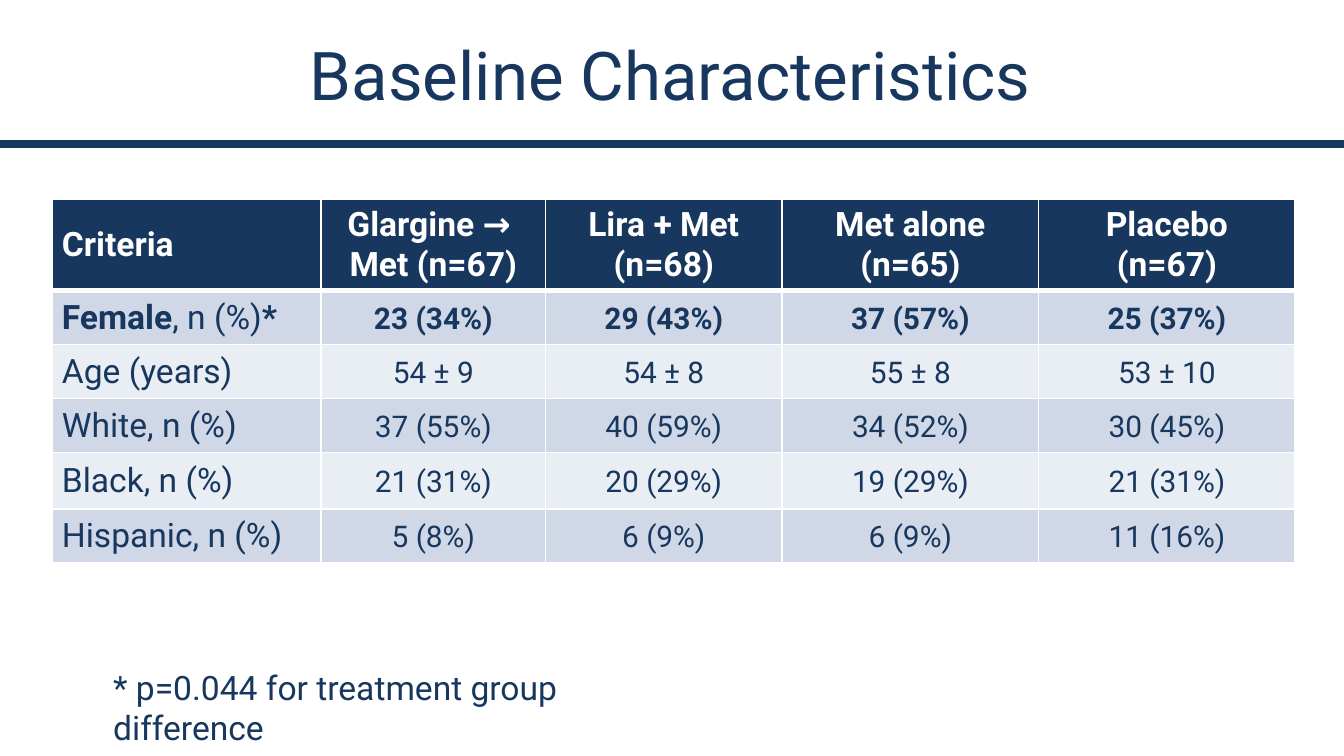
from dataclasses import dataclass

from lxml.etree import SubElement
from pptx import Presentation
from pptx.dml.color import RGBColor
from pptx.enum.shapes import MSO_CONNECTOR
from pptx.enum.text import MSO_ANCHOR, PP_ALIGN
from pptx.oxml.ns import qn
from pptx.slide import Slide
from pptx.table import _Cell
from pptx.text.text import TextFrame, _Paragraph
from pptx.util import Cm, Pt

FONT = "Roboto"
NAVY = RGBColor(0x17, 0x37, 0x5E)
WHITE = RGBColor(0xFF, 0xFF, 0xFF)
BAND_DARK = RGBColor(0xD0, 0xD8, 0xE8)
BAND_LIGHT = RGBColor(0xE9, 0xED, 0xF4)
COLUMN_WIDTHS = (5.08, 4.24, 4.47, 4.85, 4.85)
HEADER_HEIGHT = 1.7


@dataclass(frozen=True)
class Piece:
    text: str
    bold: bool = False


@dataclass(frozen=True)
class Criterion:
    label: tuple[Piece, ...]
    values: tuple[str, ...]
    bold: bool = False
    height: float = 1.02


HEADERS = ("Criteria", "Glargine → \nMet (n=67)", "Lira + Met\n(n=68)",
           "Met alone\n(n=65)", "Placebo\n(n=67)")
CRITERIA = (
    Criterion((Piece("Female", True), Piece(", n (%)"), Piece("*", True)),
              ("23 (34%)", "29 (43%)", "37 (57%)", "25 (37%)"), bold=True),
    Criterion((Piece("Age (years)"),), ("54 ± 9", "54 ± 8", "55 ± 8", "53 ± 10")),
    Criterion((Piece("White, n (%)"),), ("37 (55%)", "40 (59%)", "34 (52%)", "30 (45%)")),
    Criterion((Piece("Black, n (%)"),), ("21 (31%)", "20 (29%)", "19 (29%)", "21 (31%)"),
              height=1.07),
    Criterion((Piece("Hispanic, n (%)"),), ("5 (8%)", "6 (9%)", "6 (9%)", "11 (16%)")),
)


def add_piece(paragraph: _Paragraph, piece: Piece, size: int, color: RGBColor) -> None:
    """Add one run for each line of the piece, with line breaks between."""
    for index, line in enumerate(piece.text.split("\n")):
        if index:
            paragraph.add_line_break()
        run = paragraph.add_run()
        run.text = line
        run.font.name = FONT
        run.font.size = Pt(size)
        run.font.bold = piece.bold
        run.font.color.rgb = color


def add_text_box(slide: Slide, left: float, top: float, width: float, height: float,
                 text: str, size: int) -> TextFrame:
    shape = slide.shapes.add_textbox(Cm(left), Cm(top), Cm(width), Cm(height))
    frame = shape.text_frame
    frame.word_wrap = True
    add_piece(frame.paragraphs[0], Piece(text), size, NAVY)
    return frame


def set_margins(target: TextFrame | _Cell, horizontal: float, vertical: float) -> None:
    target.margin_left = target.margin_right = Cm(horizontal)
    target.margin_top = target.margin_bottom = Cm(vertical)


def add_borders(cell: _Cell, top: float, bottom: float) -> None:
    properties = cell._tc.get_or_add_tcPr()
    for tag, width in (("a:lnL", 1), ("a:lnR", 1), ("a:lnT", top), ("a:lnB", bottom)):
        line = SubElement(properties, qn(tag), w=str(Pt(width)))
        fill = SubElement(line, qn("a:solidFill"))
        SubElement(fill, qn("a:srgbClr"), val=str(WHITE))


def fill_cell(cell: _Cell, pieces: tuple[Piece, ...], size: int, color: RGBColor,
              background: RGBColor, centered: bool) -> None:
    cell.fill.solid()
    cell.fill.fore_color.rgb = background
    cell.vertical_anchor = MSO_ANCHOR.MIDDLE
    set_margins(cell, 0.18, 0.1)
    paragraph = cell.text_frame.paragraphs[0]
    paragraph.alignment = PP_ALIGN.CENTER if centered else PP_ALIGN.LEFT
    for piece in pieces:
        add_piece(paragraph, piece, size, color)


def add_criteria_table(slide: Slide) -> None:
    heights = [HEADER_HEIGHT] + [criterion.height for criterion in CRITERIA]
    frame = slide.shapes.add_table(len(heights), len(HEADERS), Cm(0.99), Cm(3.77),
                                   Cm(sum(COLUMN_WIDTHS)), Cm(sum(heights)))
    table = frame.table
    for column, width in zip(table.columns, COLUMN_WIDTHS):
        column.width = Cm(width)
    for row, height in zip(table.rows, heights):
        row.height = Cm(height)

    for index, header in enumerate(HEADERS):
        cell = table.cell(0, index)
        add_borders(cell, top=1, bottom=3)
        fill_cell(cell, (Piece(header, True),), 18, WHITE, NAVY, index > 0)

    for row_index, criterion in enumerate(CRITERIA, start=1):
        background = BAND_DARK if row_index % 2 else BAND_LIGHT
        for index in range(len(HEADERS)):
            cell = table.cell(row_index, index)
            add_borders(cell, top=3 if row_index == 1 else 1, bottom=1)
            if index == 0:
                fill_cell(cell, criterion.label, 18, NAVY, background, False)
                continue
            value = Piece(criterion.values[index - 1], criterion.bold)
            fill_cell(cell, (value,), 16, NAVY, background, True)
            set_margins(cell, 0, 0)
            cell.text_frame.paragraphs[0].line_spacing = 1.07


def add_title_rule(slide: Slide) -> None:
    rule = slide.shapes.add_connector(MSO_CONNECTOR.STRAIGHT, Cm(0), Cm(2.72),
                                      Cm(25.4), Cm(2.72))
    rule.line.color.rgb = NAVY
    rule.line.width = Pt(4.5)
    SubElement(rule._element.spPr, qn("a:effectLst"))


def main() -> None:
    presentation = Presentation()
    presentation.slide_width = Cm(25.4)
    presentation.slide_height = Cm(14.29)
    slide = presentation.slides.add_slide(presentation.slide_layouts[6])

    add_title_rule(slide)
    title = add_text_box(slide, 0.3, 0.2, 24.74, 2.39, "Baseline Characteristics", 36)
    title.vertical_anchor = MSO_ANCHOR.MIDDLE
    title.paragraphs[0].alignment = PP_ALIGN.CENTER
    footnote = add_text_box(slide, 1.96, 12.5, 11.76, 0.97,
                            "* p=0.044 for treatment group difference", 18)
    set_margins(footnote, 0.18, 0.1)
    add_criteria_table(slide)
    presentation.save("out.pptx")


if __name__ == "__main__":
    main()
